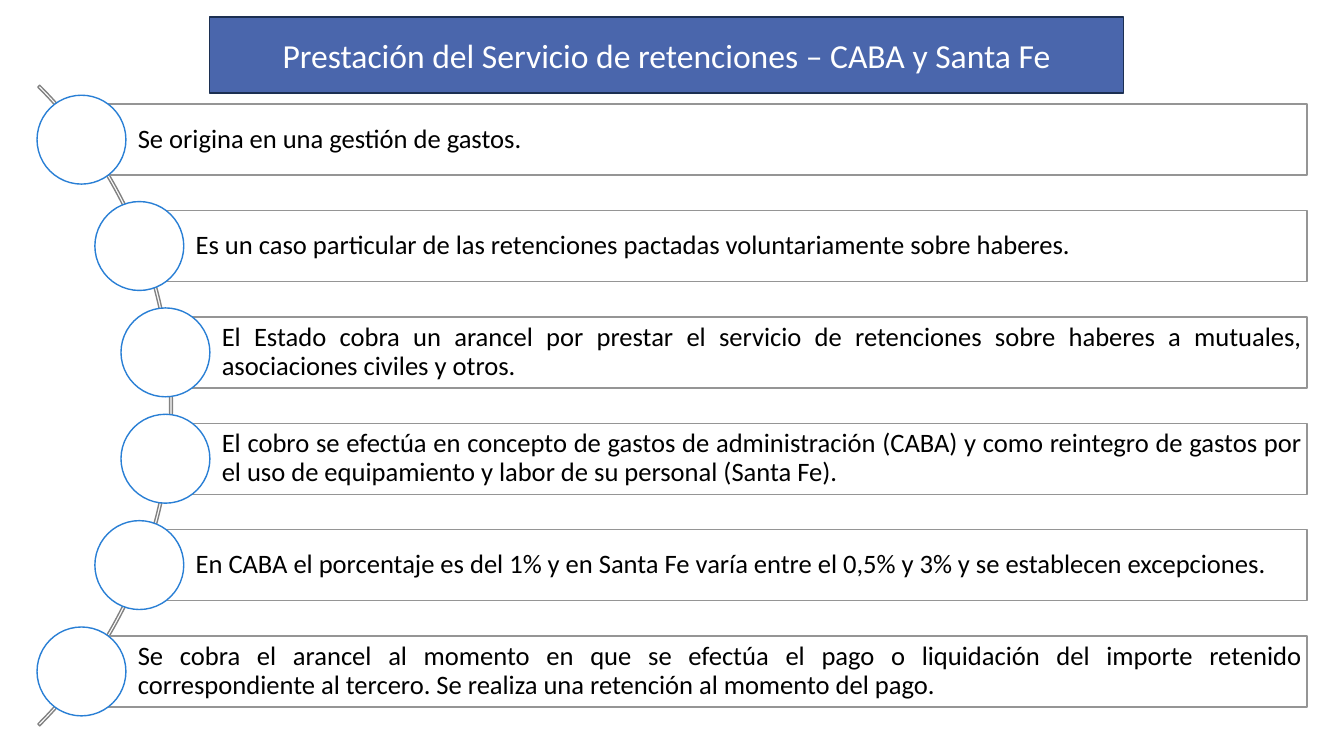
from dataclasses import dataclass
from math import sqrt

from lxml import etree
from pptx import Presentation
from pptx.dml.color import RGBColor
from pptx.enum.shapes import MSO_SHAPE
from pptx.enum.text import MSO_ANCHOR, MSO_AUTO_SIZE, PP_ALIGN
from pptx.oxml.ns import qn
from pptx.util import Cm, Pt

ARC, RECTANGLE, OVAL = MSO_SHAPE.BLOCK_ARC, MSO_SHAPE.RECTANGLE, MSO_SHAPE.OVAL
MIDDLE, NO_AUTOFIT = MSO_ANCHOR.MIDDLE, MSO_AUTO_SIZE.NONE
CENTER, JUSTIFY = PP_ALIGN.CENTER, PP_ALIGN.JUSTIFY


@dataclass(frozen=True)
class Theme:
    font: str = "Calibri"
    title_size: int = 24
    body_size: int = 19
    line_width: int = 1
    ink: str = "000000"
    paper: str = "FFFFFF"
    banner: str = "4A66AC"
    banner_edge: str = "1C3052"
    arc: str = "828282"
    bar_edge: str = "959595"
    node_edge: str = "297FD5"


class CurvedList:
    """Draws a titled list whose nodes follow an arc."""

    def __init__(self, slide, theme):
        self.slide, self.theme = slide, theme

    def paint(self, shape, fill, edge):
        if fill:
            shape.fill.solid()
            shape.fill.fore_color.rgb = RGBColor.from_string(fill)
        else:
            shape.fill.background()
        shape.line.color.rgb = RGBColor.from_string(edge)
        shape.line.width = Pt(self.theme.line_width)

    def label(self, shape, text, size, color, align, insets, spacing):
        frame = shape.text_frame
        frame.text = text
        frame.word_wrap = True
        frame.auto_size = NO_AUTOFIT
        frame.vertical_anchor = MIDDLE
        frame.margin_left, frame.margin_right = (Cm(inset) for inset in insets)
        frame.margin_top = frame.margin_bottom = Cm(0.13)
        paragraph = frame.paragraphs[0]
        paragraph.alignment = align
        paragraph.line_spacing = spacing
        font = paragraph.runs[0].font
        font.name, font.size = self.theme.font, Pt(size)
        font.color.rgb = RGBColor.from_string(color)

    def shape(self, kind, left, top, width, height, fill, edge):
        shape = self.slide.shapes.add_shape(
            kind, Cm(left), Cm(top), Cm(width), Cm(height))
        shape.shadow.inherit = False
        self.paint(shape, fill, edge)
        return shape

    def title(self, text, left, top, width, height):
        banner = self.slide.shapes.title
        banner.left, banner.top = Cm(left), Cm(top)
        banner.width, banner.height = Cm(width), Cm(height)
        outline = etree.SubElement(
            banner.element.spPr, qn("a:prstGeom"), prst="roundRect")
        etree.SubElement(outline, qn("a:avLst"))
        self.paint(banner, self.theme.banner, self.theme.banner_edge)
        self.label(banner, text, self.theme.title_size, self.theme.paper,
                   CENTER, (0.25, 0.25), 1.0)

    def arc(self, center_x, center_y, diameter):
        arc = self.shape(ARC, center_x - diameter / 2, center_y - diameter / 2,
                         diameter, diameter, None, self.theme.arc)
        for index, value in enumerate((189, 27, 0.003)):
            arc.adjustments[index] = value

    def item(self, text, left, center_y, right, height, node):
        bar = self.shape(RECTANGLE, left, center_y - height / 2, right - left,
                         height, self.theme.paper, self.theme.bar_edge)
        self.label(bar, text, self.theme.body_size, self.theme.ink,
                   JUSTIFY, (1.42, 0.13), 0.9)
        self.shape(OVAL, left - node / 2, center_y - node / 2, node, node,
                   self.theme.paper, self.theme.node_edge)


POINTS = (
    "Se origina en una gestión de gastos.",
    "Es un caso particular de las retenciones pactadas voluntariamente sobre haberes.",
    "El Estado cobra un arancel por prestar el servicio de retenciones sobre haberes "
    "a mutuales, asociaciones civiles y otros.",
    "El cobro se efectúa en concepto de gastos de administración (CABA) y como "
    "reintegro de gastos por el uso de equipamiento y labor de su personal (Santa Fe).",
    "En CABA el porcentaje es del 1% y en Santa Fe varía entre el 0,5% y 3% y se "
    "establecen excepciones.",
    "Se cobra el arancel al momento en que se efectúa el pago o liquidación del "
    "importe retenido correspondiente al tercero. Se realiza una retención al "
    "momento del pago.",
)
CENTER_X, CENTER_Y = -7.07, 10.22
NODE_RADIUS, ROW_PITCH = 11.32, 2.68


def main():
    presentation = Presentation()
    presentation.slide_width, presentation.slide_height = Cm(33.87), Cm(19.05)
    slide = presentation.slides.add_slide(presentation.slide_layouts[5])
    curved_list = CurvedList(slide, Theme())
    curved_list.title("Prestación del Servicio de retenciones – CABA y Santa Fe",
                      5.28, 0.43, 23.04, 1.91)
    curved_list.arc(CENTER_X, CENTER_Y, 22.83)
    for row, point in enumerate(POINTS):
        offset = (row - (len(POINTS) - 1) / 2) * ROW_PITCH
        left = CENTER_X + sqrt(NODE_RADIUS ** 2 - offset ** 2)
        curved_list.item(point, left, CENTER_Y + offset, 32.94, 1.79, 2.24)
    presentation.save("out.pptx")


if __name__ == "__main__":
    main()
